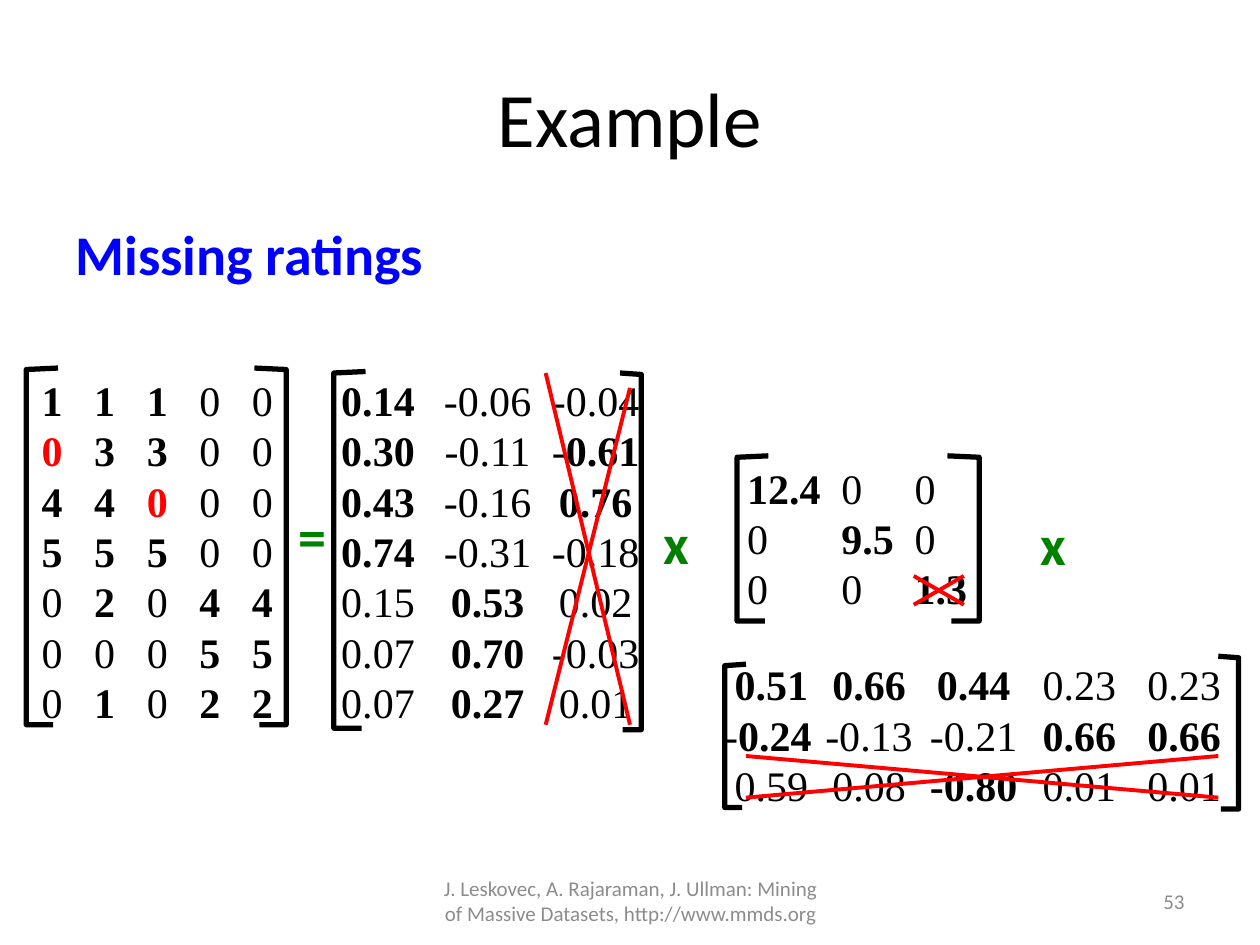
"""Build the slide on a matrix factorisation of ratings with its last factor struck out."""
from lxml import etree
from pptx import Presentation
from pptx import util as u
from pptx.dml.color import RGBColor
from pptx.enum import shapes, text
from pptx.oxml.ns import qn

THEME = {
    "black": "000000", "blue": "0000FF", "green": "008000", "red": "FF0000", "grey": "8C8C8C",
    "body font": "Calibri", "matrix font": "Times New Roman",
    "title": 44, "heading": 32, "matrix": 24, "footer": 12,
    "bracket": 3, "cross": 2.25,
}

TITLE = ("Example", (1.27, 0.76, 22.86, 3.18))
HEADING = ("Missing ratings", (1.27, 4.45, 22.86, 12.57))
FOOTER = ("J. Leskovec, A. Rajaraman, J. Ullman: Mining of Massive Datasets, http://www.mmds.org",
          (8.69, 17.65, 8.05, 1.02))
NUMBER = ("53", (18.21, 17.65, 5.92, 1.02))

# In a cell, * starts bold text and ! starts bold red text.
MATRICES = [
    {"box": (0.43, 7.42, 5.51, 7.44), "margin": 0.41,
     "align": "l", "tabs": [1.06, 2.12, 3.18, 4.24],
     "rows": [["*1", "*1", "*1", "0", "0"],
              ["!0", "*3", "*3", "0", "0"],
              ["*4", "*4", "!0", "0", "0"],
              ["*5", "*5", "*5", "0", "0"],
              ["0", "*2", "0", "*4", "*4"],
              ["0", "0", "0", "*5", "*5"],
              ["0", "*1", "0", "*2", "*2"]]},
    {"box": (6.35, 7.42, 6.99, 7.44), "margin": 0.53,
     "align": "ctr", "tabs": [2.95, 5.13],
     "rows": [["*0.14", "-0.06", "-0.04"],
              ["*0.30", "-0.11", "-*0.61"],
              ["*0.43", "-0.16", "*0.76"],
              ["*0.74", "-0.31", "-0.18"],
              ["0.15", "*0.53", "0.02"],
              ["0.07", "*0.70", "-0.03"],
              ["0.07", "*0.27", "0.01"]]},
    {"box": (14.81, 9.19, 5.51, 3.33), "margin": 0.25,
     "align": "l", "tabs": [1.9, 3.38],
     "rows": [["*12.4", "0", "0"],
              ["0", "*9.5", "0"],
              ["0", "0", "*1.3"]]},
    {"box": (14.35, 13.16, 10.8, 3.33), "margin": 0.25,
     "align": "ctr", "tabs": [2.92, 5.03, 7.16, 9.27],
     "rows": [[" *0.51", "*0.66", "*0.44", "0.23", "0.23"],
              ["-*0.24", "-0.13", "-0.21", "*0.66", "*0.66"],
              [" 0.59", "0.08", "*-0.80", "0.01", "0.01"]]},
]

BRACKETS = [
    {"tip": 1.17, "spine": 0.53, "foot": 1.07, "top": 7.42, "bottom": 14.61},
    {"tip": 5.13, "spine": 5.77, "foot": 5.23, "top": 7.42, "bottom": 14.61},
    {"tip": 7.37, "spine": 6.73, "foot": 7.29, "top": 7.49, "bottom": 14.68},
    {"tip": 12.5, "spine": 12.93, "foot": 12.55, "top": 7.52, "bottom": 14.71},
    {"tip": 15.49, "spine": 14.86, "foot": 15.42, "top": 9.19, "bottom": 12.52},
    {"tip": 19.1, "spine": 19.74, "foot": 19.18, "top": 9.19, "bottom": 12.52},
    {"tip": 15.04, "spine": 14.61, "foot": 14.96, "top": 13.39, "bottom": 16.28},
    {"tip": 24.56, "spine": 24.97, "foot": 24.61, "top": 13.23, "bottom": 16.31},
]
SLANT = 0.03

OPERATORS = [("=", 5.77, 9.98), ("x", 13.13, 10.11), ("x", 20.73, 10.13)]
OPERATOR_SIZE = (1.12, 1.63)

STRIKES = [
    (11, 7.52, 12.7, 14.61), (12.7, 7.82, 11, 14.61),
    (15.04, 15.24, 24.56, 16.08), (24.56, 15.24, 15.04, 16.08),
    (18.42, 11.61, 19.43, 12.19), (19.43, 11.61, 18.42, 12.19),
]


def color(name):
    """Return a theme colour."""
    return RGBColor.from_string(THEME[name])


def lengths(values):
    """Turn centimetres into slide lengths."""
    return [u.Cm(value) for value in values]


def style(paragraph, size, color_name, font="body font", bold=False):
    """Set the font of a whole paragraph."""
    paragraph.font.name = THEME[font]
    paragraph.font.size = u.Pt(THEME[size])
    paragraph.font.bold = bold
    paragraph.font.color.rgb = color(color_name)


def add_label(slide, words, box, size, color_name, bold=False,
              align=text.PP_ALIGN.LEFT, anchor=text.MSO_ANCHOR.MIDDLE):
    """Add a text box with one paragraph and return the paragraph."""
    frame = slide.shapes.add_textbox(*lengths(box)).text_frame
    frame.word_wrap = True
    frame.vertical_anchor = anchor
    paragraph = frame.paragraphs[0]
    paragraph.text = words
    paragraph.alignment = align
    style(paragraph, size, color_name, bold=bold)
    return paragraph


def add_tabs(paragraph, positions, align):
    """Give a paragraph its tab stops."""
    tab_list = etree.SubElement(paragraph._p.get_or_add_pPr(), qn("a:tabLst"))
    for position in positions:
        etree.SubElement(tab_list, qn("a:tab"), pos=str(u.Cm(position)), algn=align)


def add_cell(paragraph, cell):
    """Add the plain and the marked part of one matrix cell."""
    mark = "!" if "!" in cell else "*"
    plain, _, marked = cell.partition(mark)
    if plain:
        paragraph.add_run().text = plain
    if marked:
        run = paragraph.add_run()
        run.text = marked
        run.font.bold = True
        if mark == "!":
            run.font.color.rgb = color("red")


def add_matrix(slide, matrix):
    """Add a matrix as text with one tab stop per further column."""
    frame = slide.shapes.add_textbox(*lengths(matrix["box"])).text_frame
    frame.word_wrap = True
    frame.margin_left = u.Cm(matrix["margin"])
    for index, row in enumerate(matrix["rows"]):
        paragraph = frame.add_paragraph() if index else frame.paragraphs[0]
        add_tabs(paragraph, matrix["tabs"], matrix["align"])
        style(paragraph, "matrix", "black", "matrix font")
        for column, cell in enumerate(row):
            if column:
                paragraph.add_run().text = "\t"
            add_cell(paragraph, cell)


def add_bracket(slide, bracket):
    """Add one open matrix bracket."""
    spine, top, bottom = bracket["spine"], bracket["top"], bracket["bottom"]
    points = [(spine, top + SLANT), (spine, bottom), (bracket["foot"], bottom)]
    builder = slide.shapes.build_freeform(*lengths((bracket["tip"], top)))
    builder.add_line_segments([lengths(point) for point in points], close=False)
    shape = builder.convert_to_shape()
    shape.shadow.inherit = False
    shape.fill.background()
    shape.line.color.rgb = color("black")
    shape.line.width = u.Pt(THEME["bracket"])


def add_strike(slide, ends):
    """Add one red line of a cross."""
    line = slide.shapes.add_connector(shapes.MSO_CONNECTOR.STRAIGHT, *lengths(ends))
    line.line.color.rgb = color("red")
    line.line.width = u.Pt(THEME["cross"])
    etree.SubElement(line._element.spPr, qn("a:effectLst"))


def main():
    """Build and save the slide."""
    presentation = Presentation()
    presentation.slide_width, presentation.slide_height = lengths((25.4, 19.05))
    slide = presentation.slides.add_slide(presentation.slide_layouts[5])

    title = slide.shapes.title
    words, box = TITLE
    title.left, title.top, title.width, title.height = lengths(box)
    title.text_frame.text = words
    style(title.text_frame.paragraphs[0], "title", "black")

    heading = add_label(slide, *HEADING, "heading", "blue", bold=True,
                        anchor=text.MSO_ANCHOR.TOP)
    heading.line_spacing = 0.9
    add_label(slide, *FOOTER, "footer", "grey", align=text.PP_ALIGN.CENTER)
    add_label(slide, *NUMBER, "footer", "grey", align=text.PP_ALIGN.RIGHT)

    for bracket in BRACKETS:
        add_bracket(slide, bracket)
    for sign, left, top in OPERATORS:
        add_label(slide, sign, (left, top, *OPERATOR_SIZE), "heading", "green", bold=True)
    for matrix in MATRICES:
        add_matrix(slide, matrix)
    for ends in STRIKES:
        add_strike(slide, ends)

    presentation.save("out.pptx")


if __name__ == "__main__":
    main()
